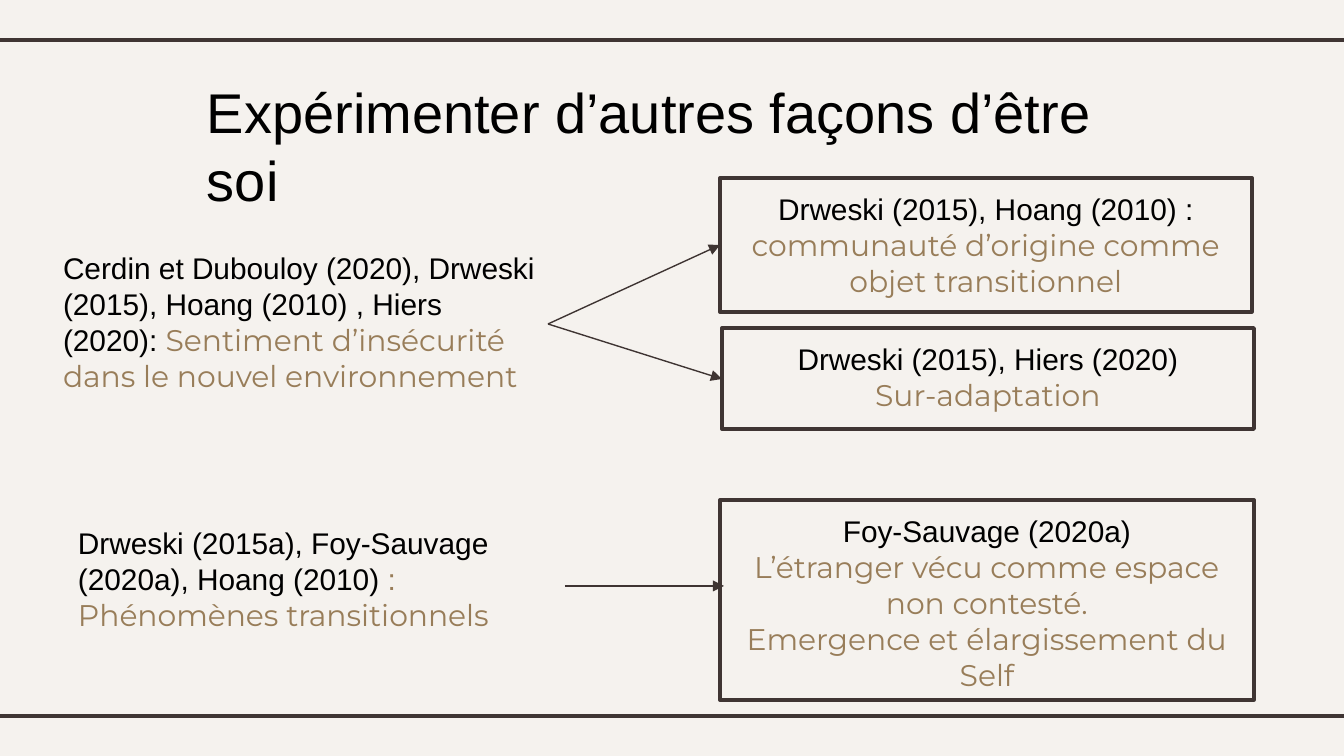
from dataclasses import dataclass

from lxml import etree
from pptx import Presentation
from pptx import util as u
from pptx.dml.color import RGBColor
from pptx.enum import shapes, text
from pptx.oxml.ns import qn

EMU_PER_PX = 914400 / 134.4
WIDTH, HEIGHT = 1344, 756


@dataclass(frozen=True)
class Theme:
    background = RGBColor.from_string("F5F2EE")
    border = RGBColor.from_string("3F3533")
    arrow = RGBColor.from_string("3E3432")
    black = RGBColor.from_string("000000")
    accent = RGBColor.from_string("987D59")
    source_font = "Arial"
    idea_font = "Montserrat"
    title_size = 30
    body_size = 16
    line_spacing = 1.2
    inset = 13


theme = Theme()


def px(*lengths):
    return [u.Emu(round(length * EMU_PER_PX)) for length in lengths]


def write(frame, paragraphs, size, alignment):
    """Fill a frame with paragraphs, each a list of (text, font, colour) runs."""
    frame.word_wrap = True
    frame.auto_size = text.MSO_AUTO_SIZE.NONE
    frame.vertical_anchor = text.MSO_ANCHOR.TOP
    inset, = px(theme.inset)
    frame.margin_left = frame.margin_right = inset
    frame.margin_top = frame.margin_bottom = inset
    for index, runs in enumerate(paragraphs):
        paragraph = frame.add_paragraph() if index else frame.paragraphs[0]
        paragraph.alignment = alignment
        paragraph.line_spacing = u.Pt(size * theme.line_spacing)
        paragraph.space_before = u.Pt(0)
        paragraph.font.size = u.Pt(size)
        for words, font, colour in runs:
            run = paragraph.add_run()
            run.text = words
            run.font.name = font
            run.font.color.rgb = colour


presentation = Presentation()
presentation.slide_width, presentation.slide_height = px(WIDTH, HEIGHT)
slide = presentation.slides.add_slide(presentation.slide_layouts[5])
slide.background.fill.solid()
slide.background.fill.fore_color.rgb = theme.background

source = (theme.source_font, theme.black)
idea = (theme.idea_font, theme.accent)

title = slide.shapes.title
title.left, title.top, title.width, title.height = px(194, 65, 978, 85)
write(title.text_frame, [[("Expérimenter d’autres façons d’être soi", *source)]],
      theme.title_size, text.PP_ALIGN.LEFT)

causes = [
    ((50, 237, 499, 176),
     [[("Cerdin et Dubouloy (2020), Drweski (2015), Hoang (2010) , Hiers (2020): ", *source),
       ("Sentiment d’insécurité dans le nouvel environnement", *idea)]]),
    ((65, 512, 466, 176),
     [[("Drweski (2015a), Foy-Sauvage (2020a), Hoang (2010)", *source),
       (" : ", theme.source_font, theme.accent),
       ("Phénomènes transitionnels", *idea)]]),
]
for bounds, paragraphs in causes:
    cause = slide.shapes.add_textbox(*px(*bounds))
    write(cause.text_frame, paragraphs, theme.body_size, text.PP_ALIGN.LEFT)

effects = [
    ((720, 178, 532, 134),
     [[("Drweski (2015), Hoang (2010) : ", *source),
       ("communauté d’origine comme objet transitionnel", *idea)]]),
    ((722, 328, 532, 101),
     [[("Drweski (2015), Hiers (2020)", *source)],
      [("Sur-adaptation", *idea)]]),
    ((720, 500, 534, 200),
     [[("Foy-Sauvage (2020a)", *source)],
      [("L’étranger vécu comme espace non contesté.", *idea)],
      [("Emergence et élargissement du Self", *idea)]]),
]
for bounds, paragraphs in effects:
    effect = slide.shapes.add_shape(shapes.MSO_SHAPE.RECTANGLE, *px(*bounds))
    effect.shadow.inherit = False
    effect.fill.solid()
    effect.fill.fore_color.rgb = theme.background
    effect.line.color.rgb = theme.border
    effect.line.width = u.Pt(2)
    write(effect.text_frame, paragraphs, theme.body_size, text.PP_ALIGN.CENTER)

rules = [((0, y, WIDTH, y), theme.border, 2.25, False) for y in (40, 716)]
arrows = [(ends, theme.arrow, 0.75, True) for ends in (
    (548, 324, 720, 245), (548, 324, 722, 379), (565, 586, 724, 586))]
for ends, colour, width, has_head in rules + arrows:
    line = slide.shapes.add_connector(shapes.MSO_CONNECTOR.STRAIGHT, *px(*ends))
    line.line.color.rgb = colour
    line.line.width = u.Pt(width)
    if has_head:
        etree.SubElement(line.line._get_or_add_ln(), qn("a:tailEnd"), type="triangle")
    etree.SubElement(line._element.spPr, qn("a:effectLst"))

presentation.save("out.pptx")
